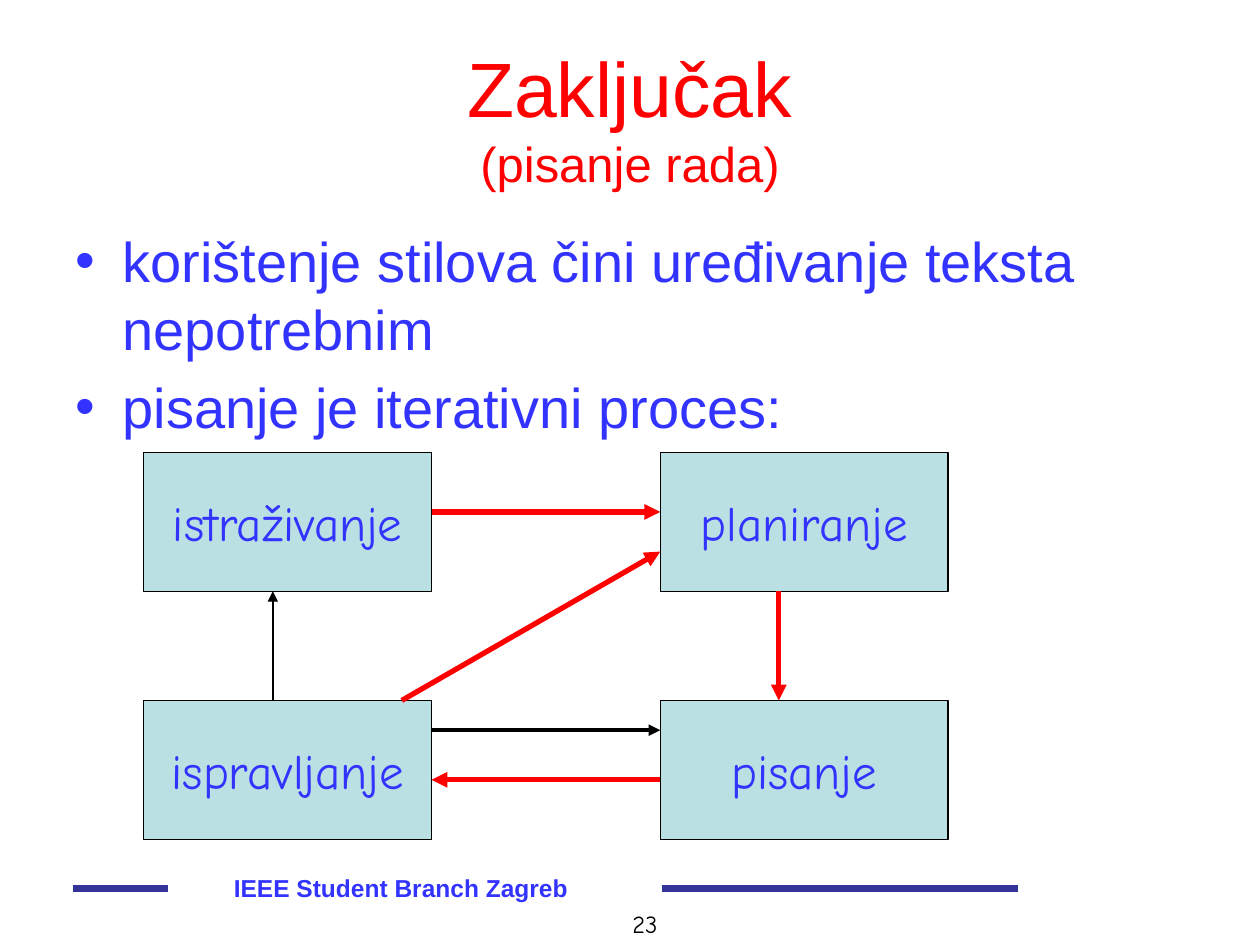
from pptx import Presentation
from pptx.dml.color import RGBColor
from pptx.enum.shapes import MSO_CONNECTOR, MSO_SHAPE
from pptx.enum.text import MSO_ANCHOR, PP_ALIGN
from pptx.oxml.ns import qn
from pptx.util import Cm, Pt
from lxml.etree import SubElement

# Content
RED, BLUE, NAVY, BLACK, TEAL = "FF0000", "3333FF", "333399", "000000", "BBE0E3"
TITLE = [("Zaključak", 44), ("(pisanje rada)", 28)]
POINTS = ["korištenje stilova čini uređivanje teksta nepotrebnim",
          "pisanje je iterativni proces:"]
STEPS = [["istraživanje", "planiranje"],
         ["ispravljanje", "pisanje"]]

# Step grid, in cm
LEFT, TOP, WIDE, HIGH = 2.9, 9.12, 5.8, 2.8
STEP_X, STEP_Y = 10.41, 5
RIGHT, NEXT = LEFT + WIDE, LEFT + STEP_X
BASE, LOW = TOP + HIGH, TOP + STEP_Y

# Arrows: start, end, colour, width
ARROWS = [
    ((RIGHT, 10.32), (NEXT, 10.32), RED, 3),
    ((NEXT, 15.72), (RIGHT, 15.72), RED, 3),
    ((5.5, LOW), (5.5, BASE), BLACK, 1.5),
    ((8.1, LOW), (NEXT, 11.12), RED, 3),
    ((RIGHT, 14.72), (NEXT, 14.72), BLACK, 2.25),
    ((15.7, BASE), (15.7, LOW), RED, 3),
]
RULES = [((13.34, 17.91), (20.52, 17.91)), ((1.47, 17.91), (3.39, 17.91))]


def tint(code):
    return RGBColor.from_string(code)


def write(shape, paras, size=28, font="Arial", color=BLUE, bold=False,
          align=PP_ALIGN.LEFT, anchor=MSO_ANCHOR.TOP, wrap=True,
          bullet=False, gap=0):
    """Each paragraph is a text, or a list of (text, size) lines."""
    frame = shape.text_frame
    frame.word_wrap = wrap
    frame.vertical_anchor = anchor
    for i, lines in enumerate(paras):
        para = frame.paragraphs[0] if i == 0 else frame.add_paragraph()
        para.alignment = align
        if bullet:
            props = para._p.get_or_add_pPr()
            props.set("marL", str(Cm(0.95)))
            props.set("indent", str(-Cm(0.95)))
            SubElement(props, qn("a:buFont"), typeface="Arial")
            SubElement(props, qn("a:buChar"), char="•")
        if i:
            para.space_before = Pt(gap)
        if isinstance(lines, str):
            lines = [(lines, size)]
        for j, (text, points) in enumerate(lines):
            if j:
                para.add_line_break()
            run = para.add_run()
            run.text = text
            run.font.size = Pt(points)
            run.font.name = font
            run.font.bold = bold
            run.font.color.rgb = tint(color)


def box(x, y, w, h):
    return slide.shapes.add_textbox(Cm(x), Cm(y), Cm(w), Cm(h))


def draw(start, end, color, width, arrow=False):
    line = slide.shapes.add_connector(
        MSO_CONNECTOR.STRAIGHT, *(Cm(v) for v in start + end))
    line.line.color.rgb = tint(color)
    line.line.width = Pt(width)
    if arrow:
        SubElement(line.line._get_or_add_ln(), qn("a:tailEnd"), type="triangle")
    SubElement(line._element.spPr, qn("a:effectLst"))


deck = Presentation()
deck.slide_width, deck.slide_height = Cm(25.4), Cm(19.05)
slide = deck.slides.add_slide(deck.slide_layouts[6])

# Footer
for start, end in RULES:
    draw(start, end, NAVY, 4)
write(box(12.5, 18.21, 1.3, 0.84), ["23"], size=14, font="Comic Neue",
      color=BLACK, wrap=False)
write(box(4.06, 17.48, 8.05, 1.32), ["IEEE Student Branch Zagreb"], size=14,
      bold=True, align=PP_ALIGN.CENTER)

# Title and points
write(box(1.27, 0.76, 22.86, 3.18), [TITLE], color=RED,
      align=PP_ALIGN.CENTER, anchor=MSO_ANCHOR.MIDDLE)
write(box(1.27, 4.45, 22.86, 12.57), POINTS, size=32, bullet=True, gap=6.4)

# Steps
for row, names in enumerate(STEPS):
    for col, name in enumerate(names):
        step = slide.shapes.add_shape(
            MSO_SHAPE.FLOWCHART_PROCESS, Cm(LEFT + col * STEP_X),
            Cm(TOP + row * STEP_Y), Cm(WIDE), Cm(HIGH))
        step.shadow.inherit = False
        step.fill.solid()
        step.fill.fore_color.rgb = tint(TEAL)
        step.line.color.rgb = tint(BLACK)
        step.line.width = Pt(0.75)
        write(step, [name], font="Comic Neue", align=PP_ALIGN.CENTER,
              anchor=MSO_ANCHOR.MIDDLE, wrap=False)

# Arrows
for start, end, color, width in ARROWS:
    draw(start, end, color, width, arrow=True)

deck.save("out.pptx")
